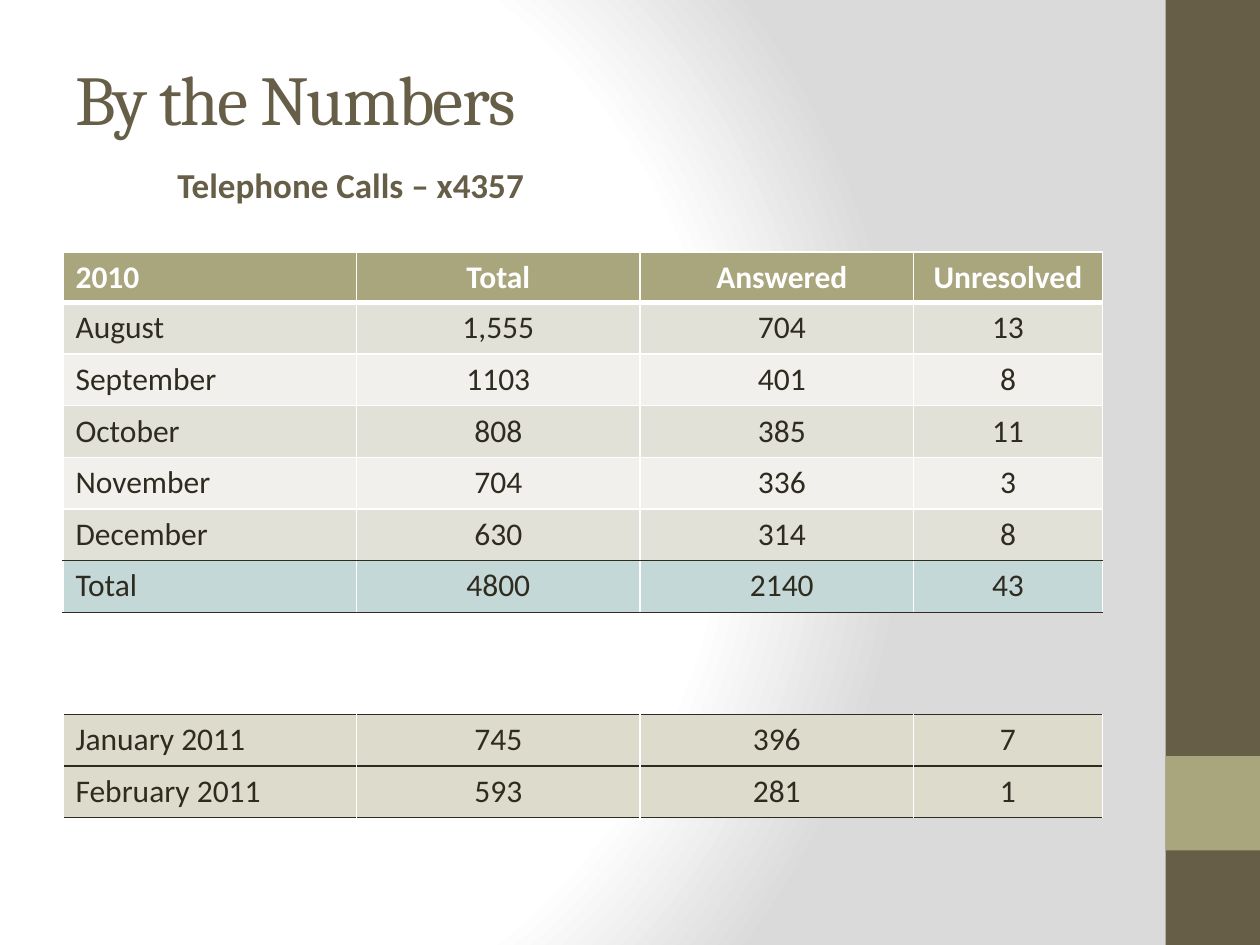
from lxml.etree import SubElement
from pptx import Presentation
from pptx.dml.color import RGBColor
from pptx.enum.shapes import MSO_SHAPE
from pptx.enum.text import MSO_ANCHOR, PP_ALIGN
from pptx.oxml import parse_xml
from pptx.oxml.ns import nsdecls, qn
from pptx.util import Inches, Pt

BROWN, OLIVE, INK, WHITE = "675E47", "A9A57C", "2F2B20", "FFFFFF"
BANDS = ["E2E1D7", "F1F0EC"]
TOTAL_FILL, MONTH_FILL = "C4D8D7", "DDDBCB"
LEFT, ROW_H = 0.5, 0.41

# Each column: left, width, cell texts
CALLS_2010 = [
    (0.5, 2.33, ["2010", "August", "September", "October", "November", "December", "Total"]),
    (2.83, 2.25, ["Total", "1,555", "1103", "808", "704", "630", "4800"]),
    (5.08, 2.25, ["Answered", "704", "401", "385", "336", "314", "2140"]),
    (7.25, 1.5, ["Unresolved", "13", "8", "11", "3", "8", "43"]),
]
MONTHS_2011 = [
    (5.67, ["January 2011", "745", "396", "7"]),
    (6.08, ["February 2011", "593", "281", "1"]),
]
MONTH_WIDTHS = [2.33, 2.25, 2.17, 1.5]


def rgb(color):
    return RGBColor.from_string(color)


def write(tf, text, size=18, font="Calibri", color=INK, bold=False,
          align=PP_ALIGN.LEFT, spacing=None):
    p = tf.paragraphs[0]
    p.alignment = align
    r = p.add_run()
    r.text = text
    r.font.size, r.font.name, r.font.bold = Pt(size), font, bold
    r.font.color.rgb = rgb(color)
    if spacing is not None:
        r.font._element.set("spc", str(int(spacing * 100)))
    return p


def set_background(s):
    stops = "".join(f'<a:gs pos="{pos}000"><a:srgbClr val="{color}"/></a:gs>'
                    for pos, color in [(0, WHITE), (75, WHITE), (100, "DADADA")])
    bg = parse_xml(
        f'<p:bg {nsdecls("p", "a")}><p:bgPr><a:gradFill rotWithShape="1">'
        f'<a:gsLst>{stops}</a:gsLst><a:path path="circle">'
        '<a:fillToRect l="20000" t="50000" r="100000" b="50000"/></a:path>'
        '</a:gradFill><a:effectLst/></p:bgPr></p:bg>')
    s._element.cSld.insert(0, bg)


def add_block(s, x, y, w, h, color):
    sp = s.shapes.add_shape(MSO_SHAPE.RECTANGLE, Inches(x), Inches(y), Inches(w), Inches(h))
    sp.shadow.inherit = False
    sp.fill.solid()
    sp.fill.fore_color.rgb = rgb(color)
    sp.line.fill.background()


def add_sidebar(s, x, y, w, h):
    add_block(s, x, y, w, h, BROWN)
    add_block(s, x, y + 0.8 * h, w, w, OLIVE)


def add_heading(s, x, y, w, h):
    # Title
    title = s.shapes.title
    title.left, title.top, title.width, title.height = map(Inches, (x, y, w, h))
    title.text_frame.vertical_anchor = MSO_ANCHOR.MIDDLE
    write(title.text_frame, "By the Numbers", size=40, font="Cambria",
          color=BROWN, spacing=-1)
    # Subtitle
    sp = s.shapes.add_textbox(Inches(x), Inches(y + h), Inches(w), Inches(0.42))
    sp.text_frame.word_wrap = True
    p = write(sp.text_frame, "Telephone Calls – x4357", size=20, color=BROWN, bold=True)
    p._p.get_or_add_pPr().set("marL", str(Inches(0.81)))


def add_borders(cell, top, bottom):
    tcPr = cell._tc.get_or_add_tcPr()
    sides = [("L", WHITE, 1), ("R", WHITE, 1), ("T", *top), ("B", *bottom)]
    for side, color, width in sides:
        ln = SubElement(tcPr, qn(f"a:ln{side}"), w=str(Pt(width)))
        fill = SubElement(ln, qn("a:solidFill"))
        SubElement(fill, qn("a:srgbClr"), val=color)


def fill_cell(cell, text, fill, top, bottom, **fmt):
    add_borders(cell, top, bottom)
    cell.fill.solid()
    cell.fill.fore_color.rgb = rgb(fill)
    write(cell.text_frame, text, **fmt)


def add_grid(s, x, y, widths, heights):
    table = s.shapes.add_table(len(heights), len(widths), Inches(x), Inches(y),
                               Inches(sum(widths)), Inches(sum(heights))).table
    table.first_row = table.horz_banding = False
    for col, w in zip(table.columns, widths):
        col.width = Inches(w)
    for row, h in zip(table.rows, heights):
        row.height = Inches(h)
    return table


def add_column(s, x, y, w, texts, align):
    """One column of the 2010 figures: header, banded months, total."""
    last = len(texts) - 1
    table = add_grid(s, x, y, [w], [0.4] + [ROW_H] * last)
    thin, thick, dark = (WHITE, 1), (WHITE, 3), (INK, 1)
    for i, text in enumerate(texts):
        header, total = i == 0, i == last
        fill = OLIVE if header else TOTAL_FILL if total else BANDS[(i - 1) % 2]
        top = thick if i == 1 else dark if total else thin
        bottom = thick if header else dark if i >= last - 1 else thin
        fill_cell(table.cell(i, 0), text, fill, top, bottom, align=align,
                  color=WHITE if header else INK, bold=header)


def add_month(s, x, y, texts):
    """One single-row table of 2011 figures."""
    table = add_grid(s, x, y, MONTH_WIDTHS, [ROW_H])
    for i, text in enumerate(texts):
        fill_cell(table.cell(0, i), text, MONTH_FILL, (INK, 1), (INK, 1),
                  align=PP_ALIGN.CENTER if i else PP_ALIGN.LEFT)


def main():
    prs = Presentation()
    prs.slide_width, prs.slide_height = Inches(10), Inches(7.5)
    s = prs.slides.add_slide(prs.slide_layouts[5])
    set_background(s)
    add_sidebar(s, 9.25, 0, 0.75, 7.5)
    add_heading(s, LEFT, 0.3, 8.33, 0.95)
    for i, (x, w, texts) in enumerate(CALLS_2010):
        add_column(s, x, 2, w, texts, PP_ALIGN.CENTER if i else PP_ALIGN.LEFT)
    for y, texts in MONTHS_2011:
        add_month(s, LEFT, y, texts)
    prs.save("out.pptx")


if __name__ == "__main__":
    main()
